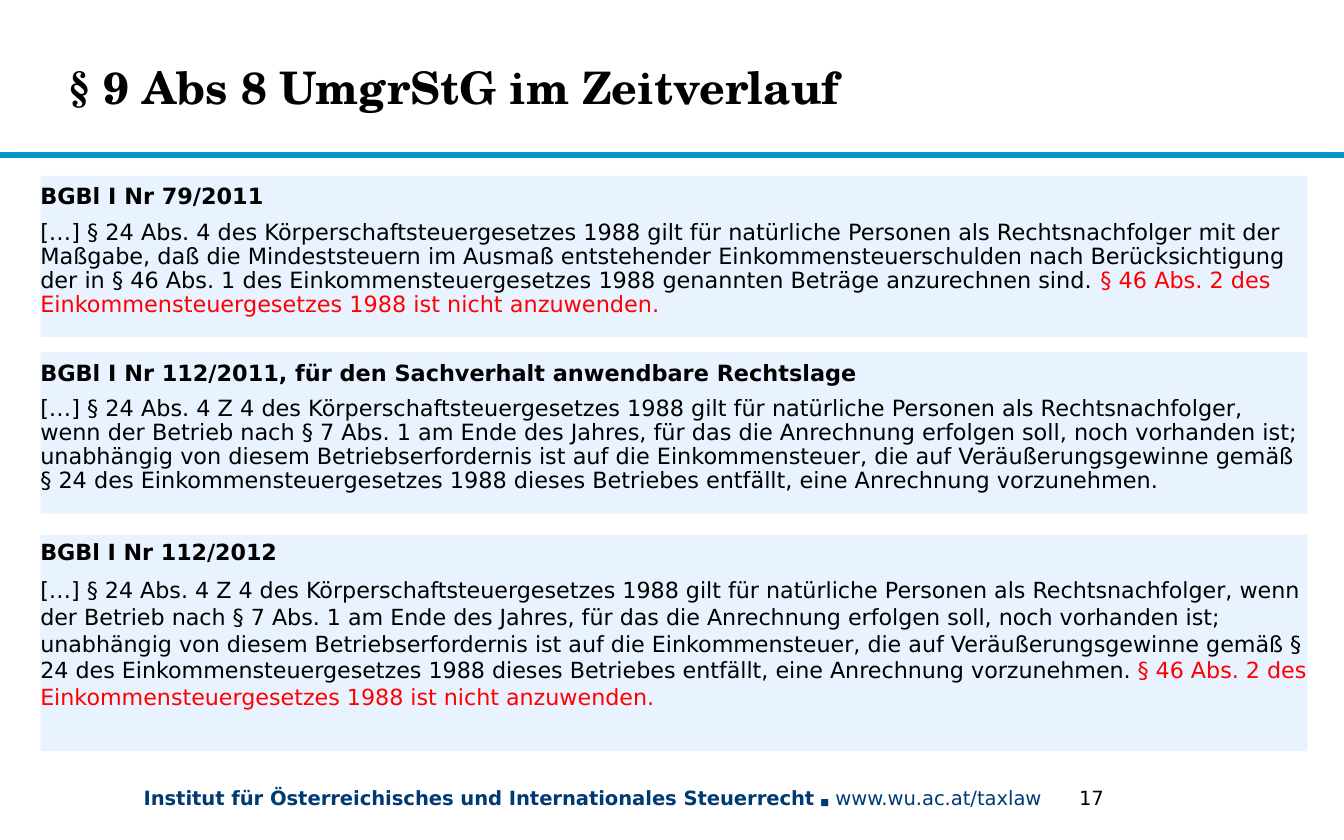
from dataclasses import dataclass

from lxml.etree import SubElement
from pptx import Presentation
from pptx.dml.color import RGBColor
from pptx.enum.shapes import MSO_SHAPE
from pptx.enum.text import MSO_ANCHOR, PP_ALIGN
from pptx.oxml.ns import qn
from pptx.util import Inches, Pt


@dataclass(frozen=True)
class Theme:
    black: RGBColor = RGBColor.from_string("000000")
    red: RGBColor = RGBColor.from_string("FF0000")
    navy: RGBColor = RGBColor.from_string("003A74")
    rule: RGBColor = RGBColor.from_string("0C94B7")
    rule_line: RGBColor = RGBColor.from_string("0096D3")
    panel: RGBColor = RGBColor.from_string("94C3FF")
    panel_alpha: int = 20
    heading: str = "TeX Gyre Schola"
    body: str = "DejaVu Sans"
    title_size: float = 24
    text_size: float = 12
    tight_size: float = 11.9
    footer_size: float = 10.5
    gap_size: float = 8
    bullet_size: float = 5


THEME = Theme()

RULE_2011 = (
    "[…] § 24 Abs. 4 des Körperschaftsteuergesetzes 1988 gilt für natürliche Personen "
    "als Rechtsnachfolger mit der Maßgabe, daß die Mindeststeuern im Ausmaß entstehender "
    "Einkommensteuerschulden nach Berücksichtigung der in § 46 Abs. 1 des "
    "Einkommensteuergesetzes 1988 genannten Beträge anzurechnen sind."
)
RULE_AMENDED = (
    "[…] § 24 Abs. 4 Z 4 des Körperschaftsteuergesetzes 1988 gilt für natürliche Personen "
    "als Rechtsnachfolger, wenn der Betrieb nach § 7 Abs. 1 am Ende des Jahres, für das die "
    "Anrechnung erfolgen soll, noch vorhanden ist; unabhängig von diesem "
    "Betriebserfordernis ist auf die Einkommensteuer, die auf Veräußerungsgewinne gemäß "
    "§ 24 des Einkommensteuergesetzes 1988 dieses Betriebes entfällt, eine Anrechnung "
    "vorzunehmen."
)
EXCLUSION = "§ 46 Abs. 2 des Einkommensteuergesetzes 1988 ist nicht anzuwenden."


def set_font(font, size, color=THEME.black, bold=False, name=THEME.body):
    font.name = name
    font.size = Pt(size)
    font.bold = bold
    font.color.rgb = color


def add_title(s, text):
    sp = s.shapes.title
    sp.left, sp.top = Inches(0.51), Inches(0.15)
    sp.width, sp.height = Inches(7.48), Inches(0.99)
    tf = sp.text_frame
    tf.margin_left = tf.margin_top = tf.margin_right = tf.margin_bottom = 0
    tf.vertical_anchor = MSO_ANCHOR.MIDDLE
    p = tf.paragraphs[0]
    p.text = text
    p.alignment = PP_ALIGN.LEFT
    set_font(p.font, THEME.title_size, bold=True, name=THEME.heading)


def add_rect(s, left, top, width, height, color):
    sp = s.shapes.add_shape(MSO_SHAPE.RECTANGLE, Inches(left), Inches(top),
                            Inches(width), Inches(height))
    sp.shadow.inherit = False
    sp.fill.solid()
    sp.fill.fore_color.rgb = color
    sp.line.fill.background()
    return sp


def add_rule(s):
    sp = add_rect(s, 0, 1.14, 10, 0.03, THEME.rule)
    sp.line.color.rgb = THEME.rule_line
    sp.line.width = Pt(1)


def add_law_panel(s, top, height, heading, text, exclusion="",
                  size=THEME.text_size, spacings=(1.0, 0.9)):
    sp = add_rect(s, 0.3, top, 9.43, height, THEME.panel)
    color = sp.fill._xPr.find(qn("a:solidFill"))[0]
    SubElement(color, qn("a:alpha"), val=str(THEME.panel_alpha * 1000))
    tf = sp.text_frame
    tf.word_wrap = True
    tf.vertical_anchor = MSO_ANCHOR.TOP
    tf.margin_left = tf.margin_right = 0
    tf.margin_top = tf.margin_bottom = Inches(0.05)
    paragraphs = tf.paragraphs[0], tf.add_paragraph()
    for p, content, spacing, bold in zip(paragraphs, (heading, text), spacings, (True, False)):
        p.alignment = PP_ALIGN.LEFT
        p.line_spacing = spacing
        p.space_after = Pt(6)
        set_font(p.font, size, bold=bold)
        p.add_run().text = content
    if exclusion:
        r = p.add_run()
        r.text = " " + exclusion
        r.font.color.rgb = THEME.red


def add_footer_text(s, left, width, runs, color):
    tf = s.shapes.add_textbox(Inches(left), Inches(5.8), Inches(width), Inches(0.28)).text_frame
    tf.word_wrap = True
    p = tf.paragraphs[0]
    set_font(p.font, THEME.footer_size, color)
    for text, size, bold in runs:
        r = p.add_run()
        r.text = text
        r.font.size = Pt(size)
        r.font.bold = bold


def main():
    prs = Presentation()
    prs.slide_width, prs.slide_height = Inches(10), Inches(6.25)
    s = prs.slides.add_slide(prs.slide_layouts[5])
    add_rule(s)
    add_title(s, "§ 9 Abs 8 UmgrStG im Zeitverlauf")
    add_law_panel(s, 1.31, 1.2, "BGBl I Nr 79/2011", RULE_2011, EXCLUSION)
    add_law_panel(s, 2.62, 1.2, "BGBl I Nr 112/2011, für den Sachverhalt anwendbare Rechtslage",
                  RULE_AMENDED)
    add_law_panel(s, 3.98, 1.61, "BGBl I Nr 112/2012", RULE_AMENDED, EXCLUSION,
                  THEME.tight_size, (0.9, 1.0))
    add_footer_text(s, 0.97, 6.96, [
        ("Institut für Österreichisches und Internationales Steuerrecht", THEME.footer_size, True),
        (" ", THEME.gap_size, True),
        ("■", THEME.bullet_size, False),
        (" www.wu.ac.at/taxlaw", THEME.footer_size, False),
    ], THEME.navy)
    add_footer_text(s, 7.93, 0.72, [("17", THEME.footer_size, False)], THEME.black)
    prs.save("out.pptx")


if __name__ == "__main__":
    main()
